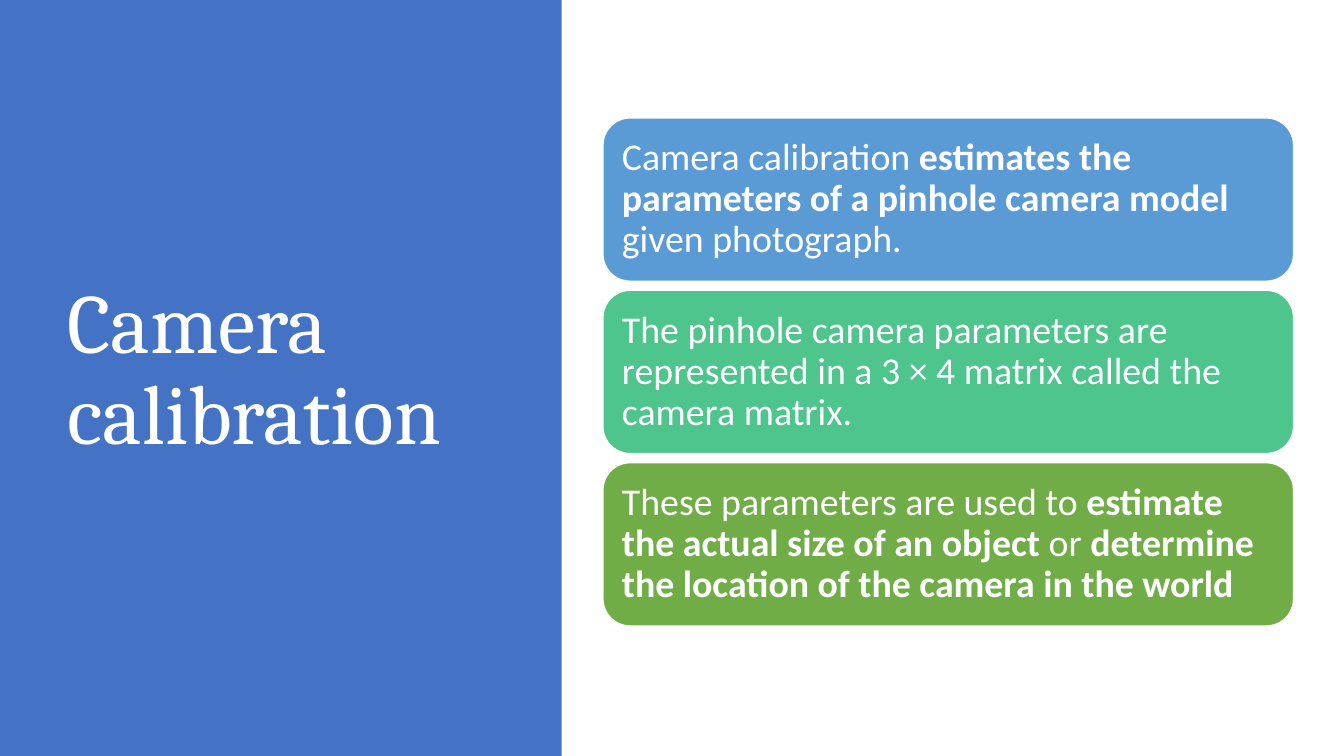
import dataclasses

import pptx
import pptx.dml.color
import pptx.enum.shapes
import pptx.enum.text
import pptx.util

WIDE, HIGH = 13.33, 7.5
HUES = {
    "panel": "4472C4",
    "blue": "5B9BD5",
    "teal": "4DC58D",
    "green": "70AD47",
    "white": "FFFFFF",
}

# Card column: left edge, first row, and row step
LEFT, TOP, STEP = 5.98, 1.17, 1.71
CARD_W, CARD_H = 6.85, 1.62

KINDS = pptx.enum.shapes.MSO_SHAPE


@dataclasses.dataclass(frozen=True)
class Card:
    hue: str
    runs: list[tuple[str, bool]]


CARDS = [
    Card("blue", [
        ("Camera calibration ", False),
        ("estimates the parameters of a pinhole camera model", True),
        (" given photograph.", False),
    ]),
    Card("teal", [
        ("The pinhole camera parameters are represented in a 3 × 4 matrix "
         "called the camera matrix.", False),
    ]),
    Card("green", [
        ("These parameters are used to", False),
        (" estimate the actual size of an object", True),
        (" or ", False),
        ("determine the location of the camera in the world", True),
    ]),
]


def tint(name: str) -> pptx.dml.color.RGBColor:
    return pptx.dml.color.RGBColor.from_string(HUES[name])


def add_box(slide, kind, hue: str, left: float, top: float,
            wide: float, high: float, edge: bool = False):
    box = slide.shapes.add_shape(
        kind, *map(pptx.util.Inches, (left, top, wide, high)))
    box.shadow.inherit = False
    box.fill.solid()
    box.fill.fore_color.rgb = tint(hue)
    if edge:
        box.line.color.rgb = tint("white")
        box.line.width = pptx.util.Pt(1)
    else:
        box.line.fill.background()
    return box


def put_text(shape, runs: list[tuple[str, bool]], *, font: str, size: float,
             side: float, rise: float) -> None:
    frame = shape.text_frame
    frame.word_wrap = True
    frame.vertical_anchor = pptx.enum.text.MSO_ANCHOR.MIDDLE
    frame.margin_left = frame.margin_right = pptx.util.Inches(side)
    frame.margin_top = frame.margin_bottom = pptx.util.Inches(rise)
    para = frame.paragraphs[0]
    para.alignment = pptx.enum.text.PP_ALIGN.LEFT
    para.line_spacing = 0.9
    for words, bold in runs:
        run = para.add_run()
        run.text = words
        run.font.name = font
        run.font.size = pptx.util.Pt(size)
        run.font.bold = bold
        run.font.color.rgb = tint("white")


def main() -> None:
    deck = pptx.Presentation()
    deck.slide_width = pptx.util.Inches(WIDE)
    deck.slide_height = pptx.util.Inches(HIGH)
    slide = deck.slides.add_slide(deck.slide_layouts[6])

    # Left panel and title
    add_box(slide, KINDS.RECTANGLE, "panel", 0, 0, 5.57, HIGH)
    title = slide.shapes.add_textbox(
        *map(pptx.util.Inches, (0.57, 0.68, 4.16, 6.02)))
    put_text(title, [("Camera calibration", False)],
             font="Cambria", size=60, side=0.1, rise=0.05)

    # Stack of cards
    for row, card in enumerate(CARDS):
        box = add_box(slide, KINDS.ROUNDED_RECTANGLE, card.hue,
                      LEFT, TOP + row * STEP, CARD_W, CARD_H, edge=True)
        put_text(box, card.runs, font="Calibri", size=27,
                 side=0.11, rise=0.11)

    deck.save("out.pptx")


if __name__ == "__main__":
    main()
